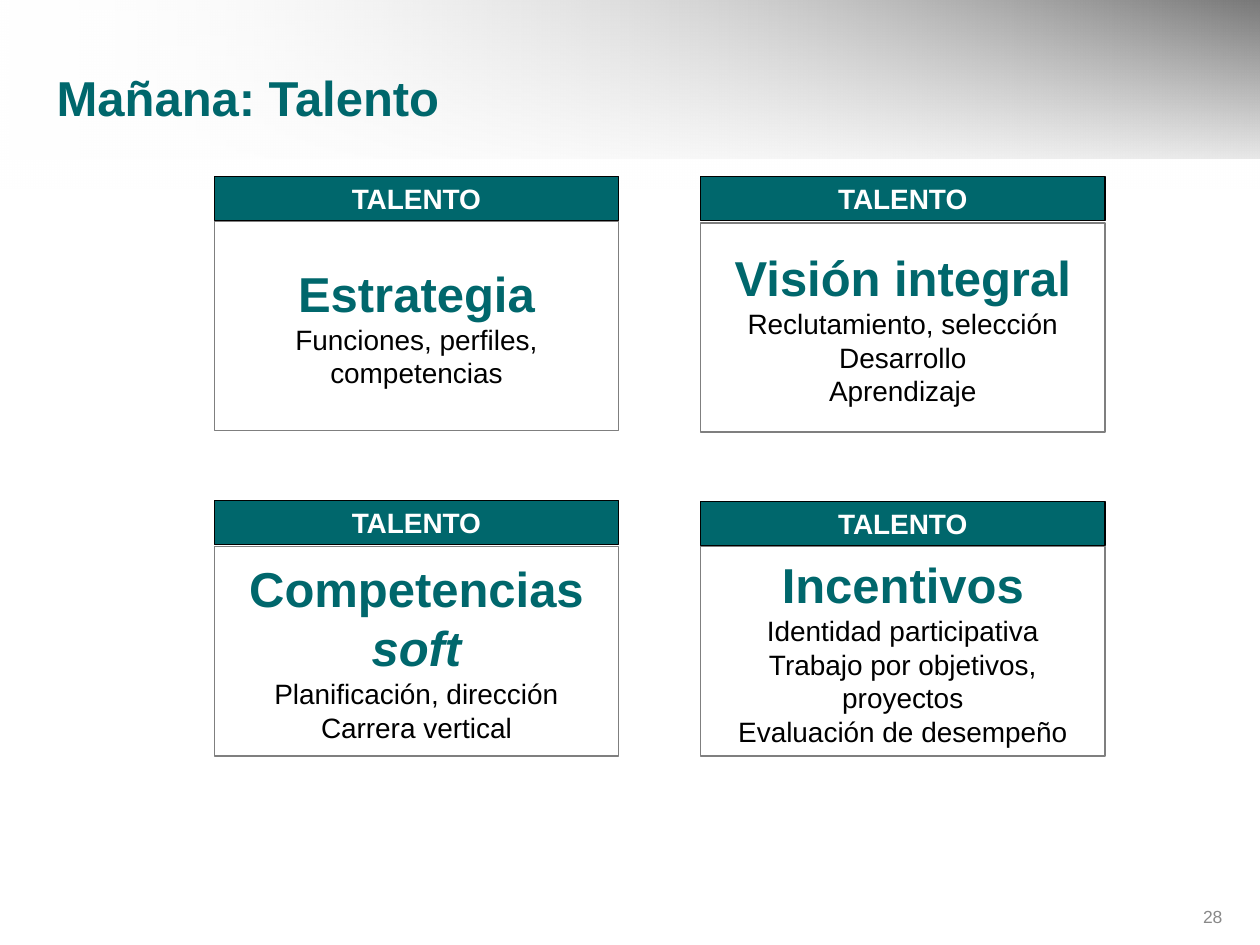
from lxml import etree
from pptx import Presentation
from pptx.dml.color import RGBColor
from pptx.enum.shapes import MSO_SHAPE
from pptx.enum.text import MSO_ANCHOR, MSO_AUTO_SIZE, PP_ALIGN
from pptx.oxml.ns import qn
from pptx.util import Inches, Pt

RECT = MSO_SHAPE.RECTANGLE
MIDDLE = MSO_ANCHOR.MIDDLE
NO_FIT = MSO_AUTO_SIZE.NONE
LEFT, CENTER, RIGHT = PP_ALIGN.LEFT, PP_ALIGN.CENTER, PP_ALIGN.RIGHT

TEAL, WHITE, BLACK, GRAY = "00676C", "FFFFFF", "000000", "7F7F7F"
TITLE = "Mañana: Talento"
LABEL = "TALENTO"
PAGE = "28"
BANDS = [
    (1.26, 0, [(0, WHITE, 0), (100, BLACK, 100)]),
    (1.5, 90, [(0, WHITE, 47), (100, WHITE, 100)]),
]
CARDS = [
    {"x": 1.7, "top": 1.4, "body": 1.76, "head": [("Estrategia", False)],
     "lines": ["Funciones, perfiles, competencias"]},
    {"x": 5.56, "top": 1.4, "body": 1.77, "head": [("Visión integral", False)],
     "lines": ["Reclutamiento, selección", "Desarrollo", "Aprendizaje"]},
    {"x": 1.7, "top": 3.97, "body": 4.34,
     "head": [("Competencias ", False), ("soft", True)],
     "lines": ["Planificación, dirección", "Carrera vertical"]},
    {"x": 5.56, "top": 3.98, "body": 4.34, "head": [("Incentivos", False)],
     "lines": ["Identidad participativa", "Trabajo por objetivos, proyectos",
               "Evaluación de desempeño"]},
]
WIDTH, BAR, BODY = 3.21, 0.35, 1.66


def color(code):
    return RGBColor.from_string(code)


def style(para, size, code, bold=False, align=CENTER):
    para.alignment = align
    font = para.font
    font.name, font.size, font.bold = "Arial", Pt(size), bold
    font.color.rgb = color(code)


def place(shape, *box):
    shape.left, shape.top, shape.width, shape.height = map(Inches, box)


def add_box(shapes, box, fill, line):
    shape = shapes.add_shape(RECT, *map(Inches, box))
    shape.shadow.inherit = False
    shape.fill.solid()
    shape.fill.fore_color.rgb = color(fill)
    shape.line.color.rgb = color(line)
    shape.line.width = Pt(0)
    frame = shape.text_frame
    frame.word_wrap = True
    frame.vertical_anchor = MIDDLE
    return frame


def add_band(shapes, height, angle, stops):
    band = shapes.add_shape(RECT, 0, 0, Inches(10), Inches(height))
    band.shadow.inherit = False
    band.line.fill.background()
    band.fill.gradient()
    grad = band.fill._xPr.find(qn("a:gradFill"))
    for child in list(grad):
        grad.remove(child)
    group = etree.SubElement(grad, qn("a:gsLst"))
    for pos, code, alpha in stops:
        stop = etree.SubElement(group, qn("a:gs"), pos=str(pos * 1000))
        tint = etree.SubElement(stop, qn("a:srgbClr"), val=code)
        etree.SubElement(tint, qn("a:alpha"), val=str(alpha * 1000))
    etree.SubElement(grad, qn("a:lin"), ang=str(angle * 60000), scaled="0")


def add_card(slide, card):
    shapes = slide.shapes.add_group_shape().shapes
    body = add_box(shapes, (card["x"], card["body"], WIDTH, BODY), WHITE, GRAY)
    head = body.paragraphs[0]
    style(head, 28, TEAL, True)
    for text, slant in card["head"]:
        run = head.add_run()
        run.text = text
        if slant:
            run.font.italic = True
    for text in card["lines"]:
        para = body.add_paragraph()
        para.text = text
        style(para, 16, BLACK)
    bar = add_box(shapes, (card["x"], card["top"], WIDTH, BAR), TEAL, BLACK)
    bar.text = LABEL
    style(bar.paragraphs[0], 16, WHITE, True)


def main():
    deck = Presentation()
    deck.slide_width, deck.slide_height = Inches(10), Inches(7.5)
    slide = deck.slides.add_slide(deck.slide_layouts[5])

    for band in BANDS:
        add_band(slide.shapes, *band)

    title = slide.shapes.title
    tree = title._element.getparent()
    tree.append(title._element)
    place(title, 0.35, 0.46, 9.21, 0.62)
    frame = title.text_frame
    frame.text = TITLE
    frame.auto_size = NO_FIT
    frame.vertical_anchor = MIDDLE
    style(frame.paragraphs[0], 28, TEAL, True, LEFT)

    for card in CARDS:
        add_card(slide, card)

    page = slide.shapes.add_textbox(*map(Inches, (9.17, 7.14, 0.63, 0.29)))
    page.text_frame.word_wrap = True
    page.text_frame.text = PAGE
    style(page.text_frame.paragraphs[0], 10, "898989", align=RIGHT)

    deck.save("out.pptx")


if __name__ == "__main__":
    main()
